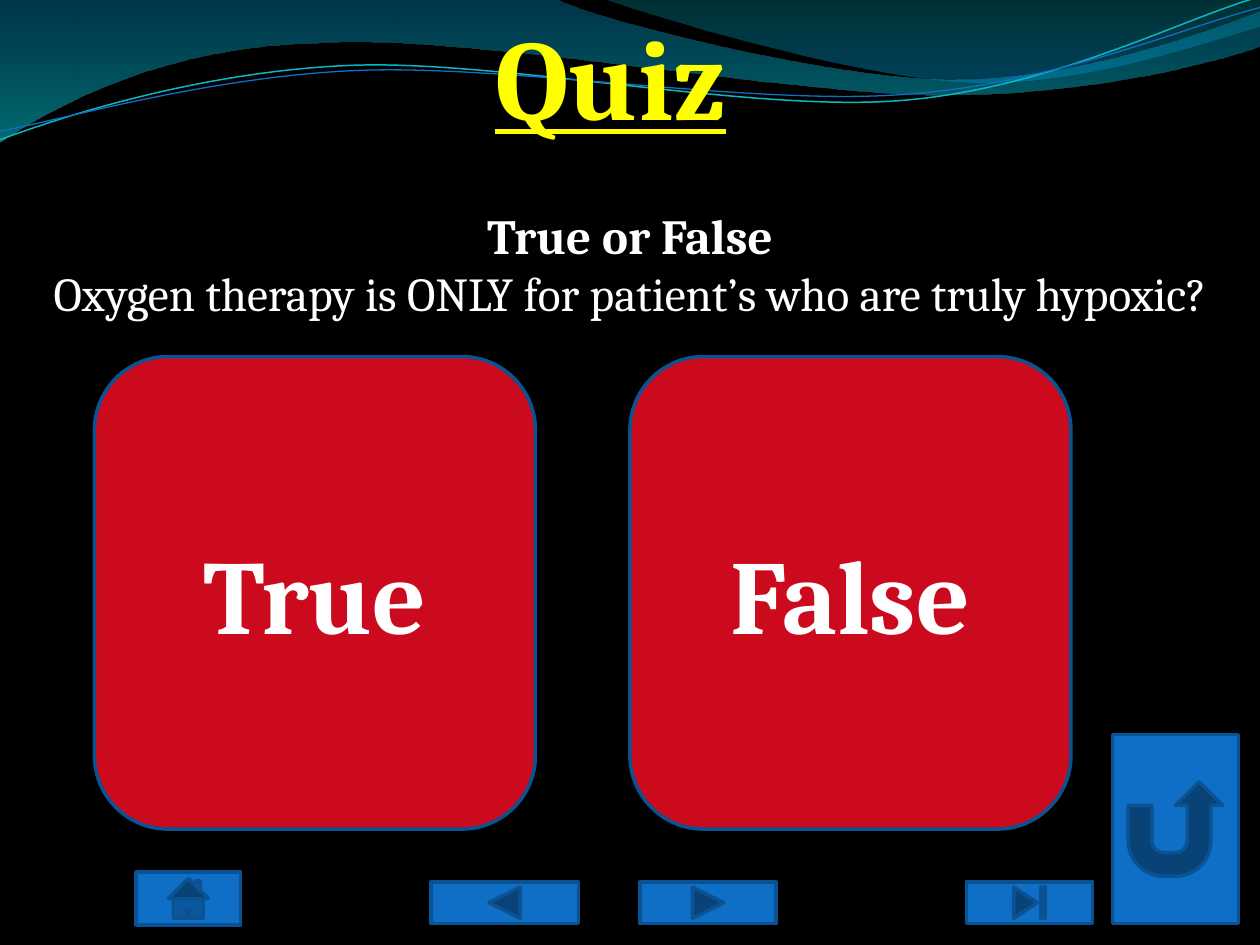
from lxml.etree import SubElement
from pptx import Presentation
from pptx.dml.color import RGBColor
from pptx.enum.shapes import MSO_SHAPE as SHAPE
from pptx.enum.text import MSO_ANCHOR as ANCHOR, MSO_AUTO_SIZE as AUTO_SIZE, PP_ALIGN as ALIGN
from pptx.oxml.ns import qn
from pptx.util import Inches, Pt

FONT = "Cambria"
BLACK, WHITE, YELLOW, RED = "000000", "FFFFFF", "FFFF00", "CB0B1D"
BLUE, NAVY, CYAN = "0F6FC6", "0B5292", "0AB8BF"

TITLE = "Quiz"
QUESTION = [
    ("True or False", 28, True),
    ("Oxygen therapy is ONLY for patient’s who are truly hypoxic?", 27, False),
]
ANSWERS = ["True", "False"]
BUTTONS = [
    (SHAPE.ACTION_BUTTON_BACK_OR_PREVIOUS, 3.42, 7, 1.17, 0.33),
    (SHAPE.ACTION_BUTTON_FORWARD_OR_NEXT, 5.08, 7, 1.08, 0.33),
    (SHAPE.ACTION_BUTTON_END, 7.67, 7, 1, 0.33),
    (SHAPE.ACTION_BUTTON_HOME, 1.08, 6.92, 0.83, 0.42),
    (SHAPE.ACTION_BUTTON_RETURN, 8.83, 5.83, 1, 1.5),
]
WAVES = [
    ([(0, 0), (4.4, -0.01), (4.76, 0.17, 6.64, 0.63, 7.58, 0.63),
      (8.53, 0.63, 9.58, 0.26, 10, 0.09), (10.01, 0.36),
      (9.83, 0.44, 8.7, 0.76, 7.46, 0.75), (6.22, 0.75, 3.82, 0.28, 2.57, 0.34),
      (1.29, 0.36, 0.46, 0.83, -0.01, 1.13)],
     [(0, "0074A1", 45), (1, "00C6CF", 55)]),
    ([(4.79, -0.01), (5.09, 0.11, 6.82, 0.62, 7.69, 0.65),
      (8.56, 0.69, 9.61, 0.32, 10, 0.21), (10, 0)],
     [(0, "00A1A9", 30), (0.8, "008BBF", 45)]),
]
STRANDS = [
    ([(0, 1.11), (0.48, 0.93, 1.58, 0.57, 2.77, 0.52),
      (3.95, 0.47, 5.93, 0.89, 7.13, 0.8), (8.33, 0.71, 9.38, 0.15, 9.98, -0.02)],
     CYAN, 0.85),
    ([(0, 1.04), (0.47, 0.96, 1.64, 0.61, 2.83, 0.56),
      (4.03, 0.51, 5.97, 0.84, 7.17, 0.75), (8.36, 0.67, 9.41, 0.21, 10, 0.06)],
     BLUE, 0.75),
]


def rgb(value):
    """Turn a hex string into a colour."""
    return RGBColor.from_string(value)


def add_outline(shapes, steps, closed):
    """Draw a freeform whose six-number steps are Bezier curves."""
    points = [(Inches(x), Inches(y))
              for step in steps for x, y in zip(step[::2], step[1::2])]
    builder = shapes.build_freeform(*points[0])
    builder.add_line_segments(points[1:], close=closed)
    outline = builder.convert_to_shape()
    outline.shadow.inherit = False
    segments = iter(list(outline._element.spPr.iter(qn("a:lnTo"))))
    for step in steps[1:]:
        segment = next(segments)
        if len(step) == 6:
            curve = segment.makeelement(qn("a:cubicBezTo"))
            segment.addprevious(curve)
            for part in (segment, next(segments), next(segments)):
                curve.append(part[0])
                part.getparent().remove(part)
    return outline


def add_wave(shapes, steps, stops):
    """Draw a closed wave with a translucent vertical gradient."""
    wave = add_outline(shapes, steps, True)
    wave.line.fill.background()
    wave.fill.gradient()
    wave.fill.gradient_angle = 270
    for stop, (position, color, _) in zip(wave.fill.gradient_stops, stops):
        stop.position = position
        stop.color.rgb = rgb(color)
    for node, (_, _, opacity) in zip(wave._element.spPr.iter(qn("a:srgbClr")), stops):
        SubElement(node, qn("a:alpha")).set("val", str(opacity * 1000))


def add_strand(shapes, steps, color, width):
    """Draw an open curved line."""
    strand = add_outline(shapes, steps, False)
    strand.fill.background()
    strand.line.color.rgb = rgb(color)
    strand.line.width = Pt(width)


def add_block(shapes, kind, box, color):
    """Draw a filled preset shape with a navy border."""
    block = shapes.add_shape(kind, *map(Inches, box))
    block.shadow.inherit = False
    block.fill.solid()
    block.fill.fore_color.rgb = rgb(color)
    block.line.color.rgb = rgb(NAVY)
    block.line.width = Pt(2)
    return block


def style(paragraph, size, color, bold, align, underline=False):
    """Align a paragraph and format its runs."""
    paragraph.alignment = align
    for run in paragraph.runs:
        font = run.font
        font.name, font.size, font.bold = FONT, Pt(size), bold
        font.underline = underline
        font.color.rgb = rgb(color)


def main():
    """Build the quiz slide."""
    deck = Presentation()
    deck.slide_width, deck.slide_height = Inches(10), Inches(7.5)
    slide = deck.slides.add_slide(deck.slide_layouts[5])
    slide.background.fill.solid()
    slide.background.fill.fore_color.rgb = rgb(BLACK)
    shapes = slide.shapes

    for wave in WAVES:
        add_wave(shapes, *wave)
    for strand in STRANDS:
        add_strand(shapes, *strand)
    for kind, *box in BUTTONS:
        add_block(shapes, kind, box, BLUE)

    title = shapes.title
    shapes._spTree.append(title._element)
    title.left, title.top, title.width, title.height = map(Inches, (3.83, 0, 2.29, 1.19))
    heading = title.text_frame
    heading.text = TITLE
    heading.word_wrap = False
    heading.auto_size = AUTO_SIZE.SHAPE_TO_FIT_TEXT
    heading.vertical_anchor = ANCHOR.TOP
    style(heading.paragraphs[0], 65, YELLOW, True, ALIGN.LEFT, True)

    question = shapes.add_textbox(*map(Inches, (0, 1.58, 10, 1.03))).text_frame
    question.word_wrap = True
    question.auto_size = AUTO_SIZE.SHAPE_TO_FIT_TEXT
    question.text = "\n".join(text for text, _, _ in QUESTION)
    for paragraph, (_, size, bold) in zip(question.paragraphs, QUESTION):
        style(paragraph, size, WHITE, bold, ALIGN.CENTER)

    for i, answer in enumerate(ANSWERS):
        box = (0.75 + i * 4.25, 2.83, 3.5, 3.75)
        card = add_block(shapes, SHAPE.ROUNDED_RECTANGLE, box, RED).text_frame
        card.text = answer
        card.vertical_anchor = ANCHOR.MIDDLE
        style(card.paragraphs[0], 60, WHITE, True, ALIGN.CENTER)

    deck.save("out.pptx")


if __name__ == "__main__":
    main()
